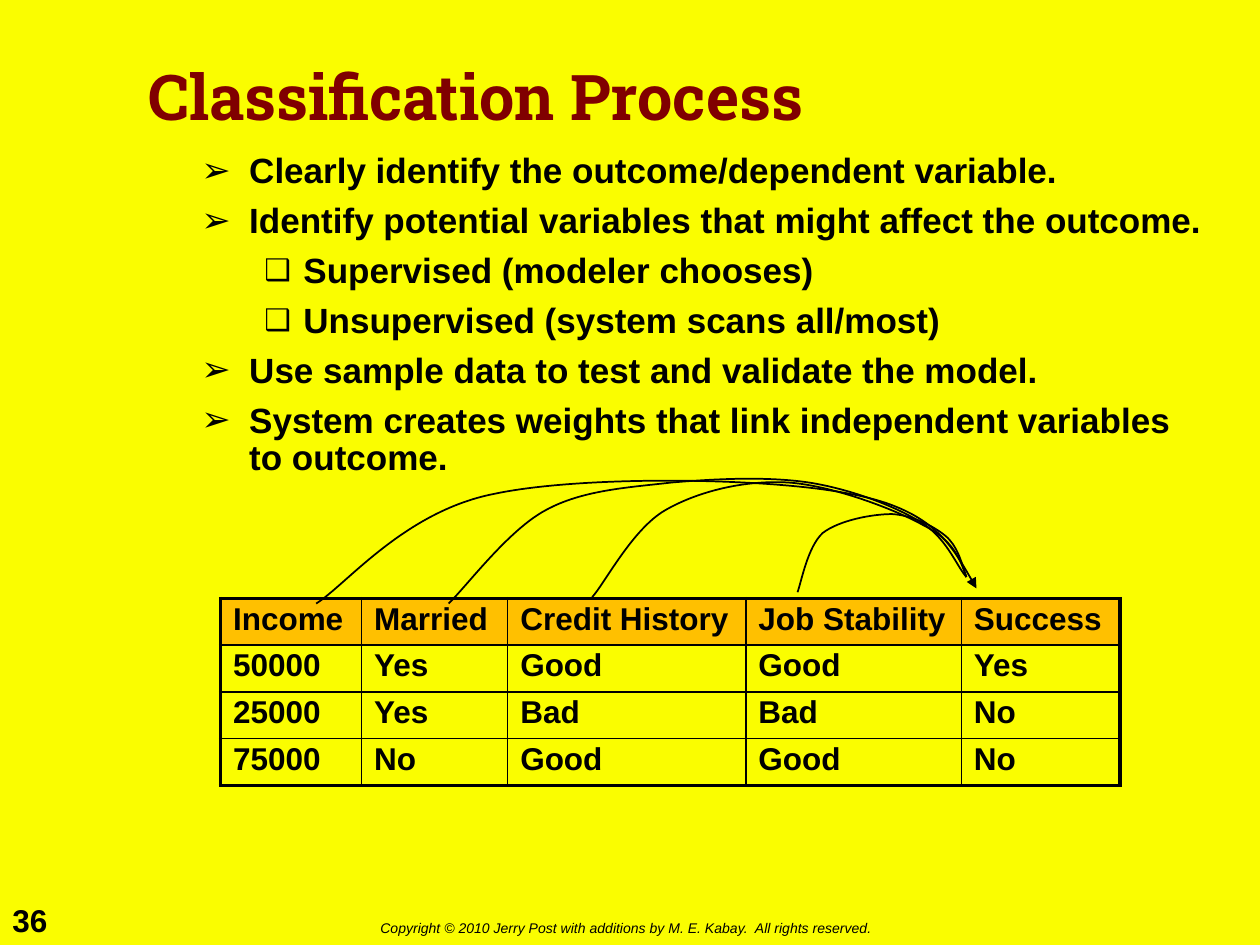
from itertools import chain

from lxml.etree import SubElement
from pptx import Presentation
from pptx.dml.color import RGBColor
from pptx.enum.text import MSO_ANCHOR
from pptx.oxml import parse_xml
from pptx.oxml.ns import nsdecls, qn
from pptx.util import Inches, Pt

THEME = {
    "background": "FAFD00", "ink": "000000", "title": "800000", "header": "FFC000",
    "font": "Arial", "title_font": "Roboto Slab",
    "title_size": 36, "body_size": 20, "table_size": 18, "number_size": 18, "footer_size": 8,
    "thin": 1, "thick": 2.25, "line_spacing": 0.9, "space_before": 6.9,
}

TITLE = "Classification Process"
NUMBER = "36"
FOOTER = "Copyright © 2010 Jerry Post with additions by M. E. Kabay.  All rights reserved."

# (level, text)
POINTS = [
    (0, "Clearly identify the outcome/dependent variable."),
    (0, "Identify potential variables that might affect the outcome."),
    (1, "Supervised (modeler chooses)"),
    (1, "Unsupervised (system scans all/most)"),
    (0, "Use sample data to test and validate the model."),
    (0, "System creates weights that link independent variables to outcome."),
]
# level: (bullet, left margin, hanging indent, bullet size in percent)
BULLETS = {0: ("➢", 0.38, 0.38, 100), 1: ("❑", 0.81, 0.31, 85)}

TABLE_AT = (1.75, 4.75)
COLUMN_WIDTHS = [1.12, 1.16, 1.89, 1.71, 1.26]
ROW_HEIGHT = 0.33
ROWS = [
    ["Income", "Married", "Credit History", "Job Stability", "Success"],
    ["50000", "Yes", "Good", "Good", "Yes"],
    ["25000", "Yes", "Bad", "Bad", "No"],
    ["75000", "No", "Good", "Good", "No"],
]

# Each link: a start point, then three points for every Bezier segment.
LINKS = {
    "Income": [(2.51, 4.79), (2.75, 4.64), (3.21, 4.06), (3.92, 3.92),
               (4.62, 3.77), (6.11, 3.79), (6.75, 3.92),
               (7.39, 4.04), (7.57, 4.35), (7.75, 4.67)],
    "Married": [(3.56, 4.79), (3.69, 4.67), (4.03, 4.21), (4.33, 4.05),
                (4.62, 3.89), (4.98, 3.87), (5.33, 3.83),
                (5.68, 3.8), (6.09, 3.78), (6.42, 3.83),
                (6.74, 3.88), (7.09, 4.01), (7.3, 4.14),
                (7.51, 4.26), (7.59, 4.49), (7.67, 4.58)],
    "Credit History": [(4.7, 4.74), (4.8, 4.63), (5.02, 4.2), (5.28, 4.05),
                       (5.54, 3.9), (5.91, 3.81), (6.25, 3.83),
                       (6.59, 3.85), (7.1, 4.04), (7.33, 4.17),
                       (7.57, 4.29), (7.62, 4.44), (7.67, 4.58)],
    "Job Stability": [(6.33, 4.7), (6.36, 4.62), (6.41, 4.34), (6.53, 4.23),
                      (6.66, 4.13), (6.92, 4.08), (7.08, 4.08),
                      (7.24, 4.09), (7.4, 4.17), (7.5, 4.25),
                      (7.6, 4.33), (7.63, 4.46), (7.67, 4.58)],
}
ARROW_LINK = "Income"


def rgb(name):
    return RGBColor.from_string(THEME[name])


def write(p, text, size, color="ink", font="font", spacing=None, **formats):
    r = p.add_run()
    r.text = text
    if spacing:
        p.line_spacing = spacing
    formats = {"name": THEME[font], "size": Pt(THEME[size]), **formats}
    for key, value in formats.items():
        setattr(r.font, key, value)
    r.font.color.rgb = rgb(color)


def add_box(slide, at, anchor=MSO_ANCHOR.TOP):
    tf = slide.shapes.add_textbox(*map(Inches, at)).text_frame
    tf.word_wrap = True
    tf.vertical_anchor = anchor
    return tf


def set_bullet(p, level):
    char, margin, hanging, percent = BULLETS[level]
    pPr = p._p.get_or_add_pPr()
    pPr.set("marL", str(Inches(margin)))
    pPr.set("indent", str(-Inches(hanging)))
    color = SubElement(pPr, qn("a:buClr"))
    SubElement(color, qn("a:srgbClr"), val=THEME["ink"])
    SubElement(pPr, qn("a:buSzPct"), val=str(percent * 1000))
    SubElement(pPr, qn("a:buFont"), typeface=THEME["font"])
    SubElement(pPr, qn("a:buChar"), char=char)


def add_points(slide):
    tf = add_box(slide, (1.5, 1.17, 8.17, 3.08))
    for i, (level, text) in enumerate(POINTS):
        p = tf.add_paragraph() if i else tf.paragraphs[0]
        p.level = level
        set_bullet(p, level)
        if i:
            p.space_before = Pt(THEME["space_before"])
        write(p, text, "body_size", spacing=THEME["line_spacing"], bold=True)


def set_borders(cell, outer):
    """Draw all four sides, thick where the side lies on the table's edge."""
    tcPr = cell._tc.get_or_add_tcPr()
    for i, side in enumerate("LRTB"):
        width = Pt(THEME["thick" if outer[side] else "thin"])
        tcPr.insert(i, parse_xml(
            f'<a:ln{side} {nsdecls("a")} w="{width}"><a:solidFill>'
            f'<a:srgbClr val="{THEME["ink"]}"/></a:solidFill></a:ln{side}>'))


def add_data_table(slide):
    size = (sum(COLUMN_WIDTHS), ROW_HEIGHT * len(ROWS))
    table = slide.shapes.add_table(
        len(ROWS), len(COLUMN_WIDTHS), *map(Inches, TABLE_AT + size)).table
    table.horz_banding = False
    for column, width in zip(table.columns, COLUMN_WIDTHS):
        column.width = Inches(width)
    for i, row in enumerate(ROWS):
        table.rows[i].height = Inches(ROW_HEIGHT)
        for j, text in enumerate(row):
            cell = table.cell(i, j)
            if i == 0:
                cell.fill.solid()
                cell.fill.fore_color.rgb = rgb("header")
            else:
                cell.fill.background()
            set_borders(cell, {"L": j == 0, "R": j == len(row) - 1,
                               "T": i == 0, "B": i == len(ROWS) - 1})
            write(cell.text_frame.paragraphs[0], text, "table_size",
                  spacing=THEME["line_spacing"], bold=True)


def add_curve(slide, points, arrow):
    """Build an open outline, then turn each three line steps into one Bezier."""
    (x, y), *rest = points
    builder = slide.shapes.build_freeform(Inches(x), Inches(y), scale=1.0)
    builder.add_line_segments([tuple(map(Inches, pt)) for pt in rest], close=False)
    sp = builder.convert_to_shape()
    sp.shadow.inherit = False
    sp.fill.background()
    sp.line.color.rgb = rgb("ink")
    sp.line.width = Pt(THEME["thin"])
    outline = next(sp._element.iter(qn("a:path")))
    steps = outline.findall(qn("a:lnTo"))
    for i in range(0, len(steps), 3):
        curve = SubElement(outline, qn("a:cubicBezTo"))
        curve.extend(list(chain.from_iterable(steps[i:i + 3])))
    for step in steps:
        outline.remove(step)
    if arrow:
        SubElement(sp.line._get_or_add_ln(), qn("a:tailEnd"), type="triangle")


def main():
    prs = Presentation()
    prs.slide_width, prs.slide_height = Inches(10), Inches(7.5)
    slide = prs.slides.add_slide(prs.slide_layouts[6])
    slide.background.fill.solid()
    slide.background.fill.fore_color.rgb = rgb("background")

    number = add_box(slide, (0, 7.1, 0.51, 0.4))
    write(number.paragraphs[0], NUMBER, "number_size", bold=True)
    footer = add_box(slide, (2.92, 7.25, 4.22, 0.24))
    write(footer.paragraphs[0], FOOTER, "footer_size", italic=True)
    title = add_box(slide, (1.08, 0.17, 7.83, 1.25), MSO_ANCHOR.MIDDLE)
    write(title.paragraphs[0], TITLE, "title_size", "title", "title_font",
          THEME["line_spacing"], bold=True)

    add_points(slide)
    add_data_table(slide)
    for column, points in LINKS.items():
        add_curve(slide, points, column == ARROW_LINK)
    prs.save("out.pptx")


if __name__ == "__main__":
    main()
